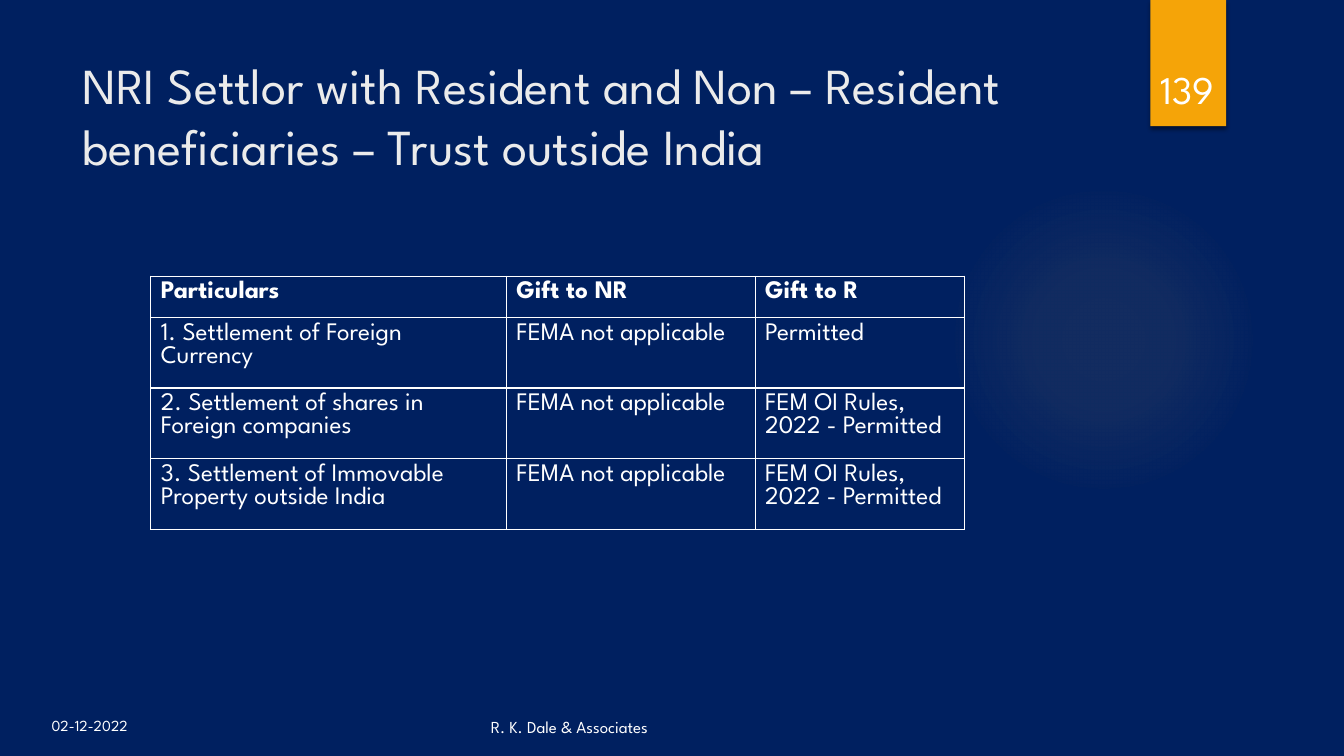
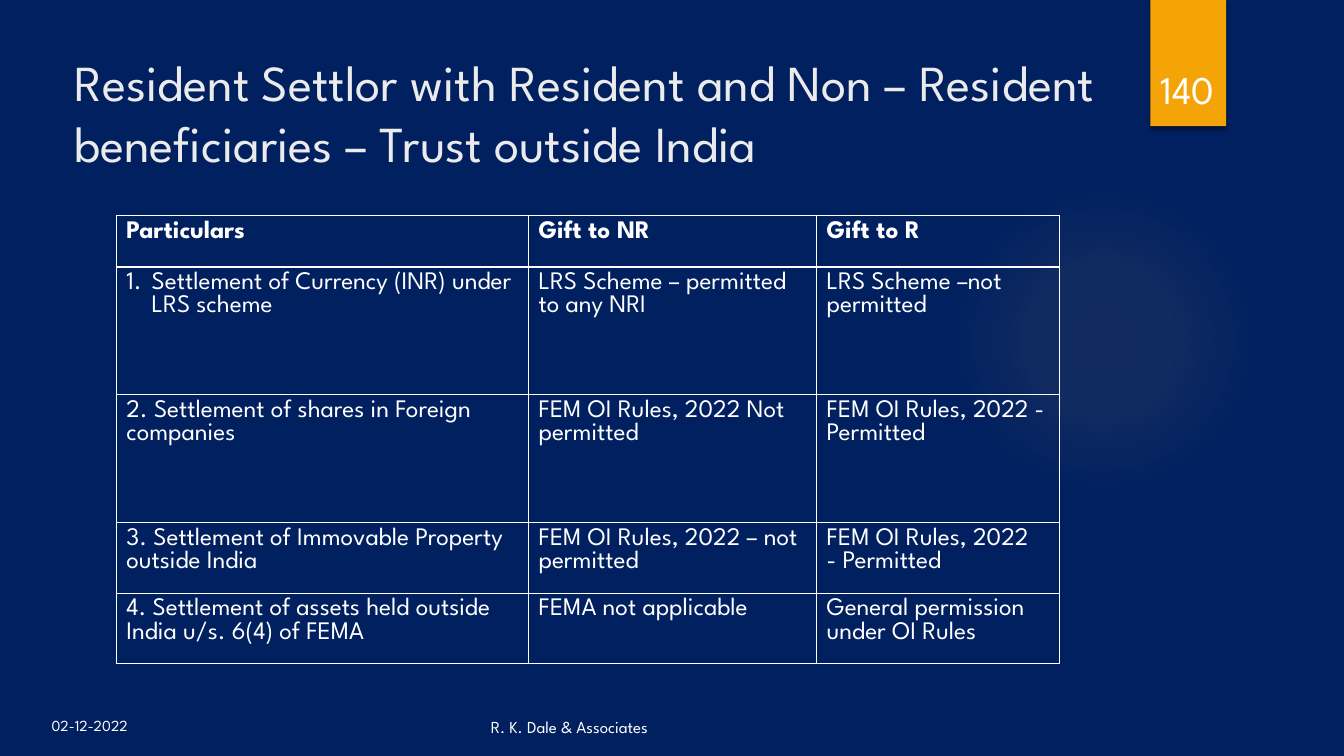
from pptx import Presentation
from pptx.dml.color import RGBColor
from pptx.enum.shapes import MSO_SHAPE as Shape
from pptx.enum.text import MSO_ANCHOR as Anchor, PP_ALIGN as Align
from pptx.oxml import parse_xml
from pptx.oxml.ns import nsdecls
from pptx.util import Cm, Pt

NAVY = RGBColor(0x00, 0x20, 0x60)
GOLD = RGBColor(0xF5, 0xA4, 0x08)
GLOW = RGBColor(0xFA, 0xC9, 0x6A)
PALE = RGBColor(0xEB, 0xEB, 0xEB)
WHITE = RGBColor(0xFF, 0xFF, 0xFF)
FONT = "League Spartan"
DATE = "02-12-2022"
FIRM = "R. K. Dale & Associates"
HEAD = ("Particulars", "Gift to NR", "Gift to R")

NRI = [
    HEAD,
    ("1. Settlement of Foreign Currency", "FEMA not applicable", "Permitted"),
    ("2. Settlement of shares in Foreign companies", "FEMA not applicable",
     "FEM OI Rules, 2022 - Permitted"),
    ("3. Settlement of Immovable Property outside India", "FEMA not applicable",
     "FEM OI Rules, 2022 - Permitted"),
]
LOCAL = [
    HEAD,
    ("Settlement of Currency (INR) under LRS scheme",
     "LRS Scheme – permitted to any NRI", "LRS Scheme –not permitted"),
    ("2. Settlement of shares in Foreign companies",
     "FEM OI Rules, 2022 Not permitted", "FEM OI Rules, 2022 - Permitted"),
    ("3. Settlement of Immovable Property outside India",
     "FEM OI Rules, 2022 – not permitted", "FEM OI Rules, 2022\v- Permitted"),
    ("4. Settlement of assets held outside India u/s. 6(4) of FEMA",
     "FEMA not applicable", "General permission under OI Rules"),
]


def style(para, size, color=WHITE, bold=False):
    """Set the font of a paragraph."""
    font = para.font
    font.name, font.size, font.bold = FONT, Pt(size), bold
    font.color.rgb = color


def place(shape, box):
    """Move a shape to a box given in centimetres."""
    shape.left, shape.top, shape.width, shape.height = map(Cm, box)


def label(slide, text, box, size, anchor=Anchor.TOP, align=Align.LEFT):
    """Add one line of white text."""
    frame = slide.shapes.add_textbox(*map(Cm, box)).text_frame
    frame.word_wrap = True
    frame.vertical_anchor = anchor
    para = frame.paragraphs[0]
    para.text, para.alignment = text, align
    style(para, size)


def plain(shapes, kind, box):
    """Add a preset shape without outline."""
    shape = shapes.add_shape(kind, *map(Cm, box))
    shape.shadow.inherit = False
    shape.line.fill.background()
    return shape


def glow(shapes, box):
    """Add the soft round light."""
    disc = plain(shapes, Shape.OVAL, box)
    stops = "".join(
        f'<a:gs pos="{pos}000"><a:srgbClr val="{GLOW}">'
        f'<a:alpha val="{alpha}000"/></a:srgbClr></a:gs>'
        for pos, alpha in ((0, 7), (36, 6), (69, 0), (100, 0)))
    fill = parse_xml(
        f'<a:gradFill {nsdecls("a")} rotWithShape="1"><a:gsLst>{stops}</a:gsLst>'
        '<a:path path="circle"><a:fillToRect l="50000" t="50000" r="50000" '
        'b="50000"/></a:path></a:gradFill>')
    props = disc.element.spPr
    props.insert(list(props).index(props.prstGeom) + 1, fill)


def flag(shapes, box):
    """Add the gold tab with its shadow."""
    tab = plain(shapes, Shape.RECTANGLE, box)
    tab.fill.solid()
    tab.fill.fore_color.rgb = GOLD
    props = tab.element.spPr
    props.remove(props[-1])
    props.append(parse_xml(
        f'<a:effectLst {nsdecls("a")}><a:outerShdw blurRad="38100" dist="25400" '
        'dir="5400000" rotWithShape="0"><a:srgbClr val="000000">'
        '<a:alpha val="45000"/></a:srgbClr></a:outerShdw></a:effectLst>'))


def frame(slide, title, box, number):
    """Place background, decor, title, number and footer."""
    slide.background.fill.solid()
    slide.background.fill.fore_color.rgb = NAVY
    glow(slide.shapes, (23.9, 4.65, 7.82, 7.82))
    flag(slide.shapes, (28.99, 0, 1.91, 3.18))
    head = slide.shapes.title
    place(head, box)
    text = head.text_frame
    text.text, text.word_wrap = title, True
    text.vertical_anchor = Anchor.TOP
    para = text.paragraphs[0]
    para.alignment = Align.LEFT
    style(para, 36, PALE)
    label(slide, str(number), (28.75, 0.82, 2.34, 2.13), 28,
          Anchor.BOTTOM, Align.CENTER)
    label(slide, DATE, (1.05, 17.91, 2.74, 0.84), 11)
    label(slide, FIRM, (12.12, 17.86, 10.72, 0.84), 12, Anchor.BOTTOM)


def border(cell):
    """Draw a thin white line on each side of a cell."""
    props = cell._tc.get_or_add_tcPr()
    for at, side in enumerate("LRTB"):
        props.insert(at, parse_xml(
            f'<a:ln{side} {nsdecls("a")} w="12700"><a:solidFill>'
            f'<a:srgbClr val="{WHITE}"/></a:solidFill></a:ln{side}>'))


def count(para):
    """Give a paragraph a hanging automatic number."""
    props = para._p.get_or_add_pPr()
    props.set("marL", str(Cm(0.64)))
    props.set("indent", str(-Cm(0.64)))
    props.append(parse_xml(
        f'<a:buFont {nsdecls("a")} typeface="+mj-lt"/>'))
    props.append(parse_xml(
        f'<a:buAutoNum {nsdecls("a")} type="arabicPeriod"/>'))


def grid(slide, rows, spot, cols, highs, auto=False):
    """Add the table of gifts at a spot."""
    size = (sum(cols), sum(highs))
    table = slide.shapes.add_table(
        len(rows), len(cols), *map(Cm, spot + size)).table
    table.horz_banding = False
    for col, wide in zip(table.columns, cols):
        col.width = Cm(wide)
    for at, (row, high) in enumerate(zip(rows, highs)):
        table.rows[at].height = Cm(high)
        for cell, text in zip(table.rows[at].cells, row):
            cell.text = text
            cell.fill.background()
            border(cell)
            para = cell.text_frame.paragraphs[0]
            if auto and at == 1 and text == row[0]:
                count(para)
            style(para, 18, bold=at == 0)


def main():
    """Build and save both slides."""
    deck = Presentation()
    deck.slide_width, deck.slide_height = Cm(33.87), Cm(19.05)
    tail = "Resident and Non – Resident beneficiaries – Trust outside India"
    pages = (
        ("NRI Settlor with ", (1.82, 1.24, 25.7, 2.79), NRI, (3.8, 6.96),
         (8.96, 6.27, 5.28), (1.04, 1.42, 1.42, 1.42), False),
        ("Resident Settlor with ", (1.62, 1.17, 27.81, 2.79), LOCAL, (2.93, 5.43),
         (10.39, 7.26, 6.12), (1.3, 3.22, 3.22, 1.61, 1.61), True),
    )
    for number, (start, box, rows, spot, cols, highs, auto) in enumerate(pages, 139):
        slide = deck.slides.add_slide(deck.slide_layouts[5])
        frame(slide, start + tail, box, number)
        grid(slide, rows, spot, cols, highs, auto)
    deck.save("out.pptx")


if __name__ == "__main__":
    main()
